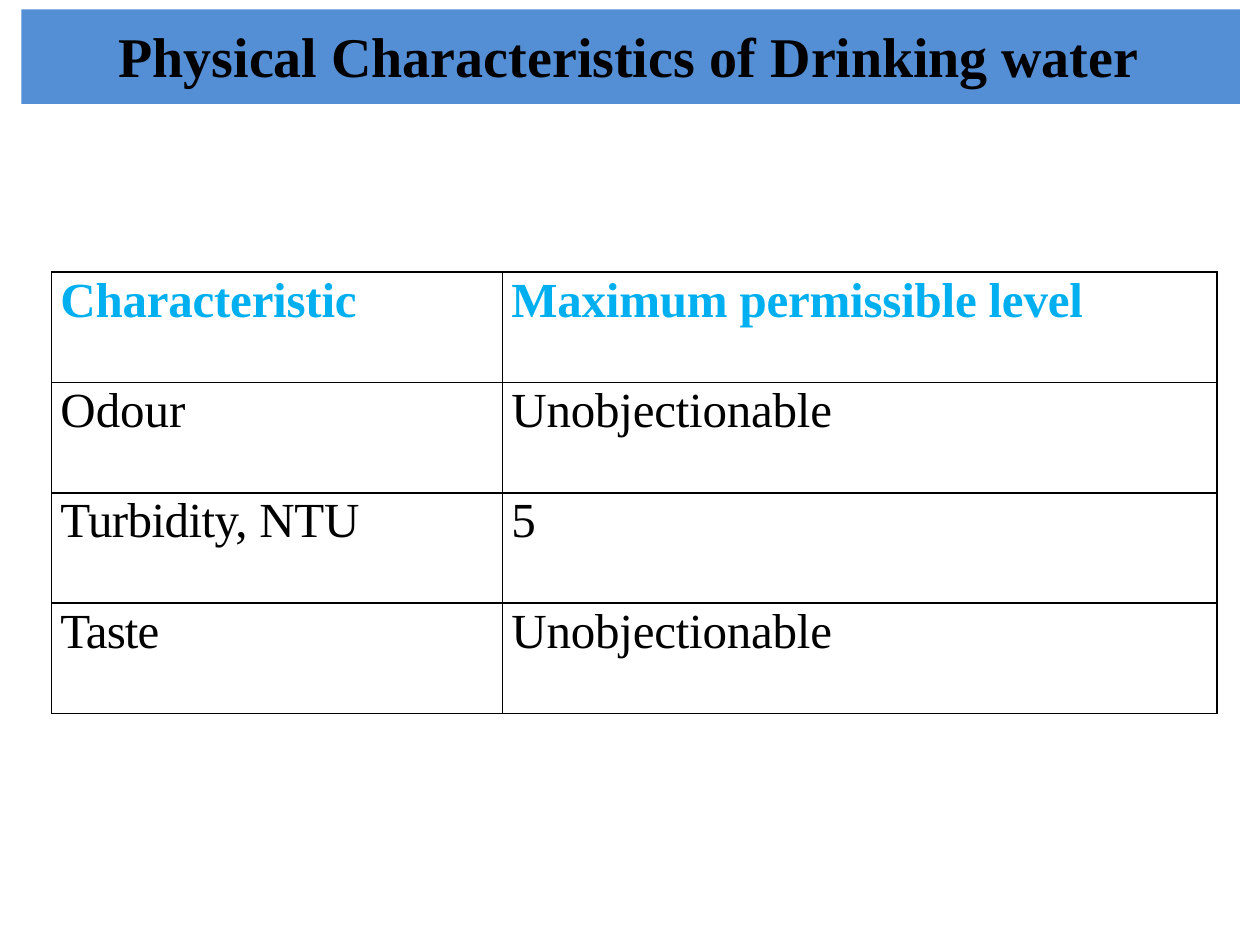
import pptx
import pptx.util
import pptx.dml.color
import pptx.enum.shapes
import pptx.enum.text
import pptx.oxml
import pptx.oxml.ns

COLORS = {"band": "548ED4", "text": "000000", "head": "00AFEF", "border": "000000"}
FONT = "Times New Roman"


def rgb(name):
    return pptx.dml.color.RGBColor.from_string(COLORS[name])


class Deck:
    """Holds the style and the current slide; lengths are shares of the slide."""

    def __init__(self, width, height):
        self.prs = pptx.Presentation()
        self.prs.slide_width = pptx.util.Inches(width)
        self.prs.slide_height = pptx.util.Inches(height)
        self.s = self.prs.slides.add_slide(self.prs.slide_layouts[5])

    def box(self, left, top, width, height):
        w, h = self.prs.slide_width, self.prs.slide_height
        return [round(v) for v in (left * w, top * h, width * w, height * h)]

    def add_text(self, tf, runs, size, color, bold):
        p = tf.paragraphs[0]
        p.alignment = pptx.enum.text.PP_ALIGN.LEFT
        p.space_before = pptx.util.Pt(1.1)
        style = {"name": FONT, "size": pptx.util.Pt(size), "bold": bold}
        for text, spacing in runs:
            r = p.add_run()
            r.text = text
            for key, value in style.items():
                setattr(r.font, key, value)
            r.font.color.rgb = rgb(color)
            # Letter spacing is stored in hundredths of a point
            r.font._element.set("spc", str(round(spacing * 100)))

    def band(self, *share):
        sp = self.s.shapes.add_shape(
            pptx.enum.shapes.MSO_SHAPE.RECTANGLE, *self.box(*share))
        sp.shadow.inherit = False
        sp.fill.solid()
        sp.fill.fore_color.rgb = rgb("band")
        sp.line.fill.background()
        self.s.shapes._spTree.insert(2, sp._element)  # behind the title

    def title(self, runs, *share):
        sp = self.s.shapes.title
        for key, value in zip(("left", "top", "width", "height"), self.box(*share)):
            setattr(sp, key, value)
        tf = sp.text_frame
        frame = {
            "margin_left": 0, "margin_right": 0, "margin_bottom": 0,
            "margin_top": pptx.util.Inches(0.01), "word_wrap": True,
            "vertical_anchor": pptx.enum.text.MSO_ANCHOR.TOP,
            "auto_size": pptx.enum.text.MSO_AUTO_SIZE.SHAPE_TO_FIT_TEXT,
        }
        for key, value in frame.items():
            setattr(tf, key, value)
        self.add_text(tf, runs, 32, "text", True)

    def borders(self, cell):
        tcPr = cell._tc.get_or_add_tcPr()
        for i, side in enumerate(("lnL", "lnR", "lnT", "lnB")):
            tcPr.insert(i, pptx.oxml.parse_xml(
                f'<a:{side} {pptx.oxml.ns.nsdecls("a")} w="12700"><a:solidFill>'
                f'<a:srgbClr val="{COLORS["border"]}"/></a:solidFill></a:{side}>'))

    def table(self, rows, column_shares, *share):
        box = self.box(*share)
        tb = self.s.shapes.add_table(len(rows), len(column_shares), *box).table
        tb.first_row = tb.horz_banding = False
        for column, part in zip(tb.columns, column_shares):
            column.width = round(box[2] * part / sum(column_shares))
        margins = {"margin_left": 0.07, "margin_right": 0,
                   "margin_top": 0.01, "margin_bottom": 0}
        for i, row in enumerate(rows):
            for j, runs in enumerate(row):
                cell = tb.cell(i, j)
                for key, value in margins.items():
                    setattr(cell, key, pptx.util.Inches(value))
                cell.fill.background()
                self.borders(cell)
                self.add_text(cell.text_frame, runs, 28, "text" if i else "head", i == 0)


def main():
    deck = Deck(10, 7.5)

    # Heading on its band
    deck.band(0.017, 0.01, 0.967, 0.1)
    deck.title([("Physical Characteristics of ", 0), ("Drinking ", -0.1), ("water", 0)],
               0.094, 0.021, 0.813, 0.068)

    # Permissible levels, each text run with its letter spacing
    rows = [
        ([("Characteristic", -0.1)], [("Maximum permissible level", -0.1)]),
        ([("Odour", 0)], [("Unobjectionable", -0.1)]),
        ([("Turbidity, ", -0.3), ("NTU", -0.1)], [("5", 0)]),
        ([("Taste", -0.5)], [("Unobjectionable", -0.1)]),
    ]
    deck.table(rows, (3.58, 5.67), 0.041, 0.288, 0.925, 0.467)

    deck.prs.save("out.pptx")


if __name__ == "__main__":
    main()
